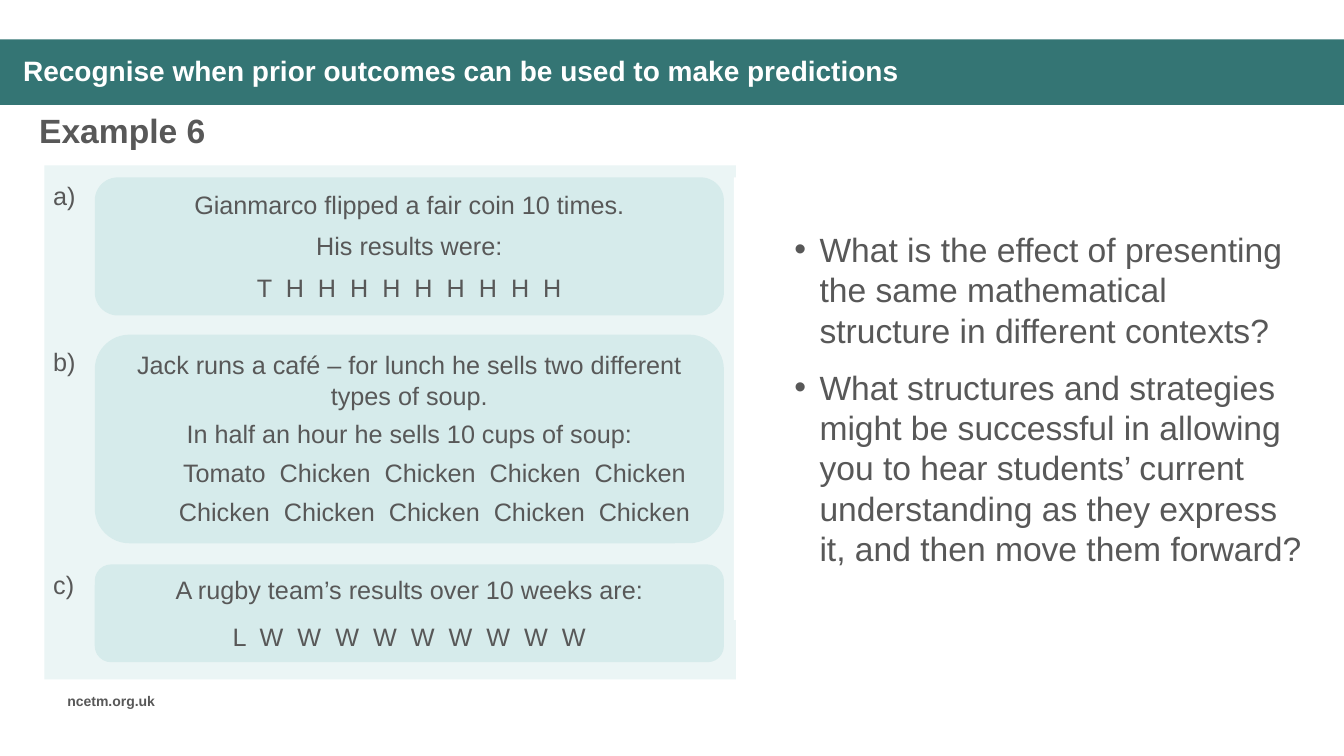
from lxml.etree import SubElement
from pptx import Presentation
from pptx.dml.color import RGBColor
from pptx.enum.shapes import MSO_SHAPE
from pptx.enum.text import MSO_ANCHOR, PP_ALIGN
from pptx.oxml.ns import qn
from pptx.util import Inches, Pt

COLORS = {"band": "347574", "panel": "EBF5F5", "card": "D6EBEB",
          "white": "FFFFFF", "text": "585858"}
FONT = "Arial"

TITLE = "Recognise when prior outcomes can be used to make predictions"
EXAMPLE = "Example 6"
FOOTER = "ncetm.org.uk"
QUESTIONS = [
    "What is the effect of presenting the same mathematical structure in different contexts?",
    "What structures and strategies might be successful in allowing you to hear students’ "
    "current understanding as they express it, and then move them forward?",
]
# Each part: label, label top, card top, card height, space before, space after,
# centred lines, indented lines
PARTS = [
    ("a)", 1.74, 1.76, 1.37, 4, 4,
     ["Gianmarco flipped a fair coin 10 times.", "His results were:",
      "T  H  H  H  H  H  H  H  H  H"], []),
    ("b)", 3.39, 3.32, 2.07, 0, 6,
     ["Jack runs a café – for lunch he sells two different types of soup.",
      "In half an hour he sells 10 cups of soup:"],
     ["Tomato  Chicken  Chicken  Chicken  Chicken",
      "Chicken  Chicken  Chicken  Chicken  Chicken"]),
    ("c)", 5.6, 5.6, 0.97, 0, 12,
     ["A rugby team’s results over 10 weeks are:",
      "L  W  W  W  W  W  W  W  W  W"], []),
]
LABEL_LEFT, CARD_LEFT, CARD_WIDTH = 0.43, 0.94, 6.24

prs = Presentation()
prs.slide_width, prs.slide_height = Inches(13.33), Inches(7.5)
slide = prs.slides.add_slide(prs.slide_layouts[6])


def add_block(kind, box, fill):
    block = slide.shapes.add_shape(kind, *map(Inches, box))
    block.shadow.inherit = False
    block.fill.solid()
    block.fill.fore_color.rgb = RGBColor.from_string(COLORS[fill])
    block.line.fill.background()
    return block


def write(shape, lines, size, color="text", bold=False, align=PP_ALIGN.LEFT,
          anchor=MSO_ANCHOR.TOP, before=0, after=0):
    frame = shape.text_frame
    frame.word_wrap = True
    frame.vertical_anchor = anchor
    frame.text = "\n".join(lines)
    for index, paragraph in enumerate(frame.paragraphs):
        paragraph.alignment = align
        paragraph.space_before = Pt(before if index else 0)
        paragraph.space_after = Pt(after)
        for run in paragraph.runs:
            run.font.name, run.font.size, run.font.bold = FONT, Pt(size), bold
            run.font.color.rgb = RGBColor.from_string(COLORS[color])
    return frame.paragraphs


def add_label(box, text, size, **style):
    return write(slide.shapes.add_textbox(*map(Inches, box)), [text], size, **style)


def indent(paragraph, margin, first=0):
    properties = paragraph._p.get_or_add_pPr()
    properties.set("marL", str(Inches(margin)))
    properties.set("indent", str(Inches(first)))
    return properties


# Header band, heading and footer
add_block(MSO_SHAPE.RECTANGLE, (0, 0.39, 13.33, 0.65), "band")
title = add_label((0.13, 0.48, 12.32, 0.47), TITLE, 20, color="white", bold=True,
                  anchor=MSO_ANCHOR.MIDDLE)
title[0].line_spacing = 0.9
add_label((0.29, 1.04, 6.66, 0.5), EXAMPLE, 24, bold=True)
add_label((0.57, 6.82, 1.21, 0.27), FOOTER, 10, bold=True)

# Panel behind the example, and the questions beside it
add_block(MSO_SHAPE.RECTANGLE, (0.44, 1.64, 6.86, 5.1), "panel")
questions = add_block(MSO_SHAPE.RECTANGLE, (7.28, 1.76, 5.73, 4.39), "white")
for question in write(questions, QUESTIONS, 24, anchor=MSO_ANCHOR.MIDDLE, after=12):
    properties = indent(question, 0.75, -0.25)
    SubElement(properties, qn("a:buFont"), typeface=FONT)
    SubElement(properties, qn("a:buChar"), char="•")

# Parts a) to c)
for label, label_top, top, height, before, after, centred, indented in PARTS:
    card = add_block(MSO_SHAPE.ROUNDED_RECTANGLE, (CARD_LEFT, top, CARD_WIDTH, height), "card")
    lines = write(card, centred + indented, 18, align=PP_ALIGN.CENTER,
                  before=before, after=after)
    for line in lines[len(centred):]:
        indent(line, 0.5)
    add_label((LABEL_LEFT, label_top, 0.54, 0.4), label, 18)

prs.save("out.pptx")
